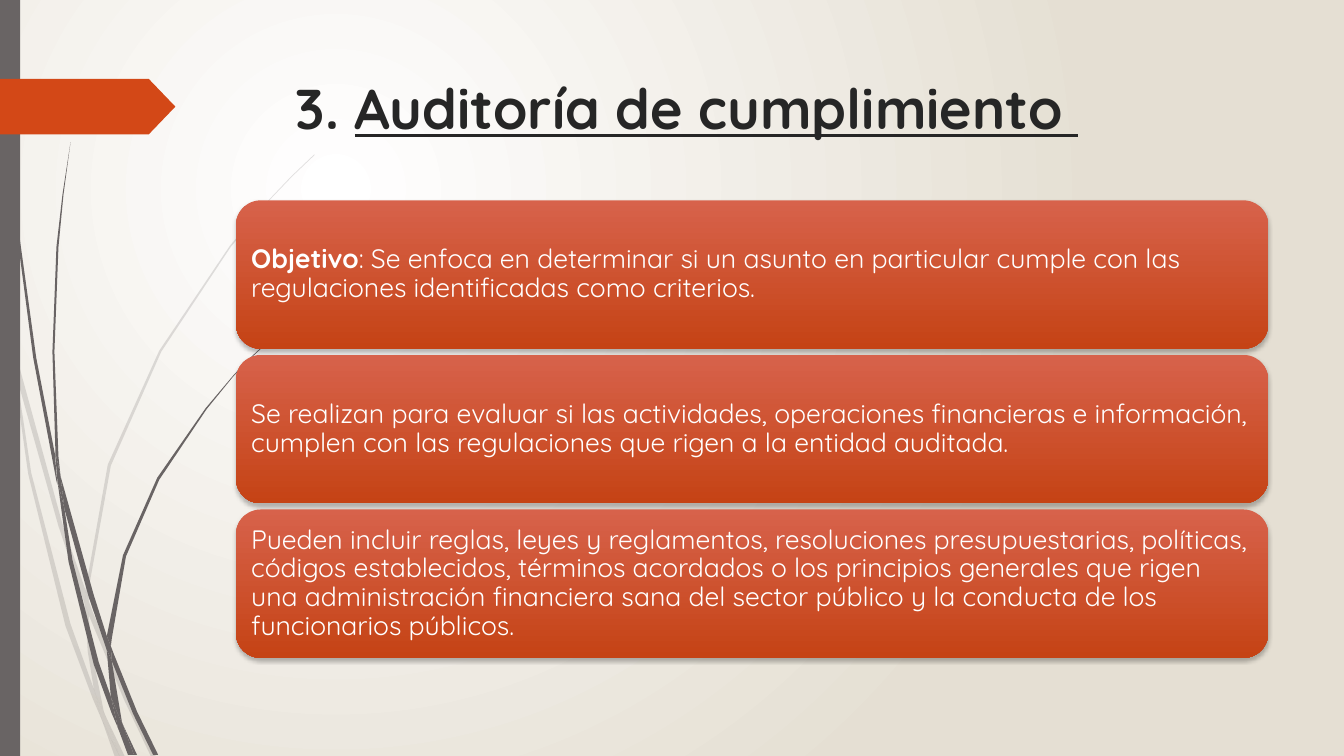
from dataclasses import dataclass

from lxml.etree import SubElement
from pptx import Presentation
from pptx.dml.color import RGBColor
from pptx.enum.shapes import MSO_SHAPE as Preset
from pptx.enum.text import MSO_ANCHOR as Anchor, MSO_AUTO_SIZE as AutoSize, PP_ALIGN as Align
from pptx.oxml.ns import qn
from pptx.util import Pt


@dataclass(frozen=True)
class Theme:
    font: str = "Quicksand"
    title_size: int = 40
    body_size: int = 19
    title: RGBColor = RGBColor.from_string("262626")
    body: RGBColor = RGBColor.from_string("FFFFFF")
    gray: RGBColor = RGBColor.from_string("696464")
    accent: RGBColor = RGBColor.from_string("D34817")
    background: tuple = ("FFFFFF", "E5DFD3")
    card: tuple = ("D7624B", "C54315")


theme = Theme()

# Grass outlines on a grid of 0.72 pt, each piece a closed run of corners.
GRID = Pt(0.72)
PALE_GRASS = [
    [(11, 350), (9, 322), (0, 282), (0, 299), (10, 344)],
    [(58, 522), (84, 599), (85, 586), (62, 520), (14, 345), (17, 376)],
    [(92, 607), (88, 596), (88, 610), (123, 694), (150, 751), (155, 751), (127, 692)],
    [(119, 751), (124, 751), (105, 711)],
    [(93, 683), (70, 619), (31, 469), (17, 376), (11, 350), (28, 470), (65, 621),
     (92, 693), (101, 714), (99, 707)],
    [(84, 599), (87, 646), (93, 683), (96, 692), (105, 711), (103, 706), (91, 646),
     (88, 610), (88, 608)],
    [(88, 584), (110, 462), (160, 349), (229, 245), (268, 198), (290, 175), (312, 154),
     (312, 153), (289, 175), (268, 197), (228, 244), (158, 348), (107, 461), (85, 584),
     (85, 586), (88, 596)],
    [(101, 714), (114, 751), (119, 751)],
    [(88, 608), (88, 610), (88, 596), (85, 586), (84, 599)],
    [(96, 692), (93, 683), (99, 707), (101, 714), (119, 751), (105, 711)],
]
DARK_GRASS = [
    [(7, 110), (17, 233), (33, 355), (56, 477), (57, 481), (55, 457), (55, 453), (36, 355),
     (19, 232), (8, 109), (5, 48), (4, 0), (3, 0), (4, 48)],
    [(88, 592), (106, 645), (106, 633), (106, 631), (93, 590), (60, 472), (64, 505)],
    [(113, 649), (110, 641), (111, 656), (132, 708), (152, 749), (157, 749), (136, 706)],
    [(110, 691), (98, 657), (72, 556), (64, 505), (57, 477), (68, 557), (93, 659),
     (111, 708), (117, 722), (116, 717)],
    [(60, 472), (58, 453), (54, 349), (58, 245), (63, 193), (70, 141), (62, 193),
     (56, 245), (52, 349), (55, 449)],
    [(133, 749), (136, 749), (122, 719)],
    [(57, 477), (64, 505), (60, 472), (55, 449), (55, 453)],
    [(111, 633), (125, 552), (158, 476), (205, 406), (231, 374), (245, 359), (261, 344),
     (260, 344), (245, 358), (231, 373), (204, 405), (156, 474), (122, 551), (106, 631),
     (110, 641)],
    [(117, 722), (127, 749), (131, 749)],
    [(106, 645), (110, 691), (116, 706), (122, 719), (121, 716), (111, 656), (109, 651)],
    [(106, 645), (109, 651), (111, 656), (110, 641), (106, 631), (106, 633)],
    [(116, 706), (110, 691), (116, 717), (117, 722), (130, 749), (133, 749), (122, 719)],
]
CARDS = [
    [("Objetivo", True),
     (": Se enfoca en determinar si un asunto en particular cumple con las "
      "regulaciones identificadas como criterios.", False)],
    [("Se realizan para evaluar si las actividades, operaciones financieras e "
      "información, cumplen con las regulaciones que rigen a la entidad auditada.", False)],
    [("Pueden incluir reglas, leyes y reglamentos, resoluciones presupuestarias, "
      "políticas, códigos establecidos, términos acordados o los principios generales "
      "que rigen una administración financiera sana del sector público y la conducta "
      "de los funcionarios públicos.", False)],
]
CARD_LEFT, CARD_TOP, CARD_WIDTH, CARD_HEIGHT, CARD_PITCH = 168.6, 143.1, 737.3, 106, 110.4


def set_gradient(fill, colors):
    fill.gradient()
    fill.gradient_angle = 270
    for position, (stop, color) in enumerate(zip(fill.gradient_stops, colors)):
        stop.position = position
        stop.color.rgb = RGBColor.from_string(color)


def paint(shape, color):
    """Give the shape a flat fill with no line and no shadow."""
    shape.shadow.inherit = False
    shape.line.fill.background()
    shape.fill.solid()
    shape.fill.fore_color.rgb = color


presentation = Presentation()
presentation.slide_width, presentation.slide_height = Pt(960), Pt(540)
slide = presentation.slides.add_slide(presentation.slide_layouts[5])
shapes = slide.shapes

set_gradient(slide.background.fill, theme.background)
gradient = slide.element.find(".//" + qn("a:gradFill"))
gradient.remove(gradient.find(qn("a:lin")))
glow = SubElement(gradient, qn("a:path"), {"path": "circle"})
SubElement(glow, qn("a:fillToRect"), {"l": "50000", "t": "50000", "r": "100000", "b": "100000"})

for outlines, alpha in ((PALE_GRASS, "20000"), (DARK_GRASS, "100000")):
    for outline in outlines:
        builder = shapes.build_freeform(*outline[0], scale=GRID)
        builder.add_line_segments(outline[1:], close=True)
        blade = builder.convert_to_shape()
        paint(blade, theme.gray)
        color = blade.element.spPr.find(".//" + qn("a:srgbClr"))
        SubElement(color, qn("a:alpha"), {"val": alpha})

side_bar = shapes.add_shape(Preset.RECTANGLE, 0, 0, Pt(14.5), Pt(540))
paint(side_bar, theme.gray)
arrow = shapes.add_shape(Preset.PENTAGON, 0, Pt(56.3), Pt(125.3), Pt(39.8))
arrow.adjustments[0] = 0.48
paint(arrow, theme.accent)

title = shapes.title
for name, value in {"left": 204.2, "top": 49, "width": 702, "height": 100.8}.items():
    setattr(title, name, Pt(value))
title_frame = title.text_frame
title_format = {"auto_size": AutoSize.NONE, "vertical_anchor": Anchor.TOP, "word_wrap": True}
for name, value in title_format.items():
    setattr(title_frame, name, value)
paragraph = title_frame.paragraphs[0]
paragraph.alignment = Align.LEFT
for text, underline in (("3. ", False), ("Auditoría de cumplimiento ", True)):
    run = paragraph.add_run()
    run.text = text
    run.font.color.rgb = theme.title
    font_format = {"name": theme.font, "size": Pt(theme.title_size),
                   "bold": True, "underline": underline}
    for name, value in font_format.items():
        setattr(run.font, name, value)

card_format = {"word_wrap": True, "vertical_anchor": Anchor.MIDDLE}
for side in ("left", "right", "top", "bottom"):
    card_format[f"margin_{side}"] = Pt(5.7)
for index, runs in enumerate(CARDS):
    card = shapes.add_shape(Preset.ROUNDED_RECTANGLE, Pt(CARD_LEFT),
                            Pt(CARD_TOP + index * CARD_PITCH), Pt(CARD_WIDTH), Pt(CARD_HEIGHT))
    set_gradient(card.fill, theme.card)
    card.line.fill.background()
    card.shadow.inherit = False
    effects = card.element.spPr.find(qn("a:effectLst"))
    shadow = SubElement(effects, qn("a:outerShdw"), {
        "blurRad": str(Pt(3)), "dist": str(Pt(2)), "dir": "5400000", "rotWithShape": "0"})
    black = SubElement(shadow, qn("a:srgbClr"), {"val": "000000"})
    SubElement(black, qn("a:alpha"), {"val": "25000"})
    for name, value in card_format.items():
        setattr(card.text_frame, name, value)
    paragraph = card.text_frame.paragraphs[0]
    paragraph.alignment = Align.LEFT
    paragraph.line_spacing = 0.9
    for text, bold in runs:
        run = paragraph.add_run()
        run.text = text
        run.font.color.rgb = theme.body
        font_format = {"name": theme.font, "size": Pt(theme.body_size), "bold": bold}
        for name, value in font_format.items():
            setattr(run.font, name, value)

presentation.save("out.pptx")
